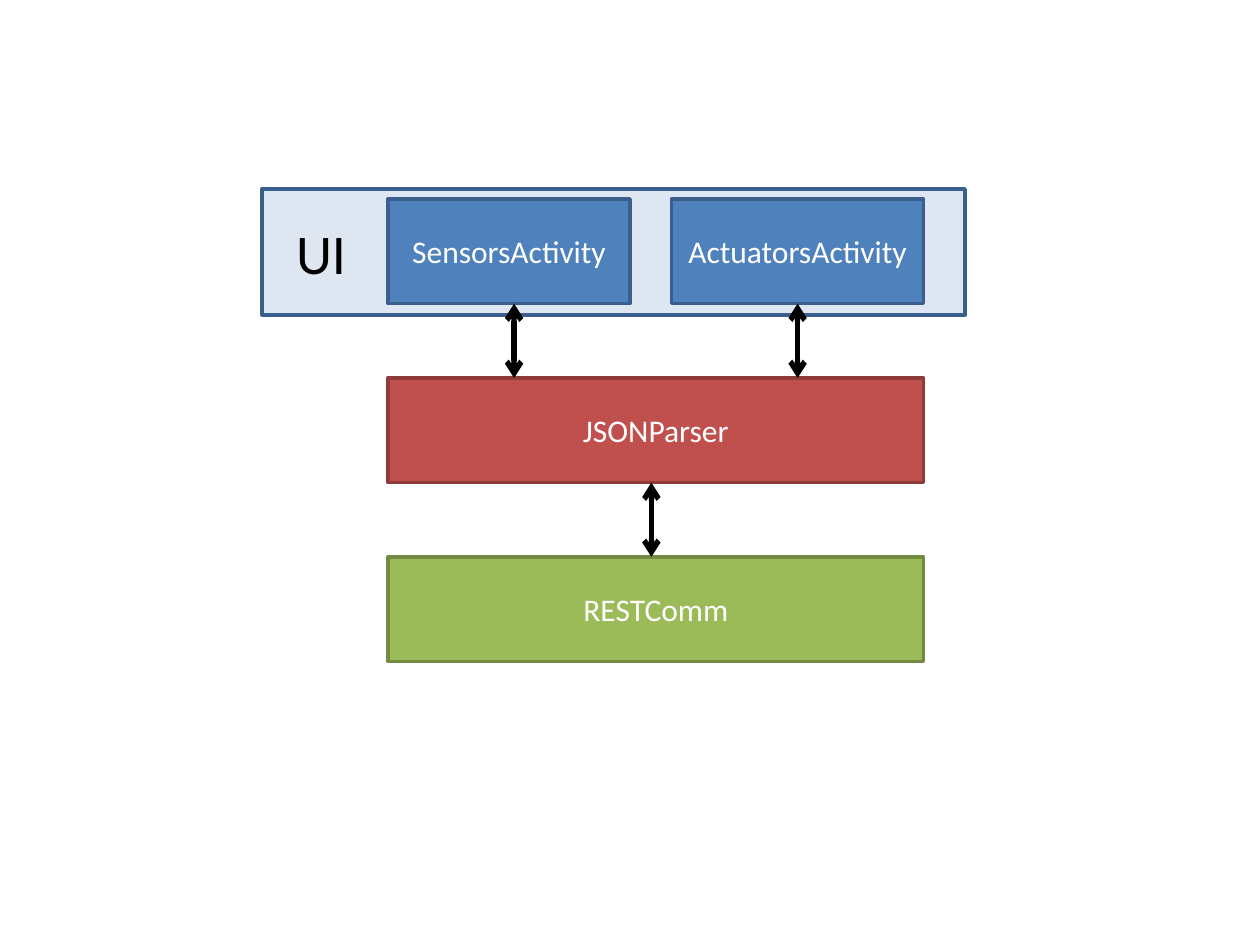
"""Build a slide showing the layers of an app and the links between them."""
from lxml import etree
from pptx import Presentation
from pptx.dml.color import RGBColor
from pptx.enum.shapes import MSO_CONNECTOR, MSO_SHAPE
from pptx.enum.text import MSO_ANCHOR, PP_ALIGN
from pptx.oxml.ns import qn
from pptx.util import Inches, Pt

RECTANGLE = MSO_SHAPE.RECTANGLE
STRAIGHT = MSO_CONNECTOR.STRAIGHT
MIDDLE = MSO_ANCHOR.MIDDLE
LEFT, CENTER = PP_ALIGN.LEFT, PP_ALIGN.CENTER

COLORS = {
    "panel": "DDE6F1",
    "blue": "4F81BD", "blue_line": "3A5F8C",
    "red": "C0504D", "red_line": "8E3B39",
    "green": "9BBB59", "green_line": "738A42",
    "black": "000000", "white": "FFFFFF",
}
BOX_LEFT, BOX_HEIGHT, LAYER_WIDTH = 3.08, 0.83, 4.25
ACTIVITY_TOP, PARSER_TOP, COMM_TOP = 1.58, 3, 4.42
BOXES = [
    ("SensorsActivity", BOX_LEFT, ACTIVITY_TOP, 1.92, "blue"),
    ("ActuatorsActivity", 5.33, ACTIVITY_TOP, 2, "blue"),
    ("JSONParser", BOX_LEFT, PARSER_TOP, LAYER_WIDTH, "red"),
    ("RESTComm", BOX_LEFT, COMM_TOP, LAYER_WIDTH, "green"),
]
ARROWS = [(6.33, ACTIVITY_TOP, PARSER_TOP), (4.08, ACTIVITY_TOP, PARSER_TOP),
          (5.17, PARSER_TOP, COMM_TOP)]


def color(name):
    return RGBColor.from_string(COLORS[name])


def add_box(slide, text, left, top, width, height, *, fill, line, size=18,
            text_color="white", align=CENTER, inset=0.1):
    shape = slide.shapes.add_shape(
        RECTANGLE, Inches(left), Inches(top), Inches(width), Inches(height))
    shape.shadow.inherit = False
    shape.fill.solid()
    shape.fill.fore_color.rgb = color(fill)
    shape.line.color.rgb = color(line)
    shape.line.width = Pt(2)
    frame = shape.text_frame
    frame.word_wrap = True
    frame.vertical_anchor = MIDDLE
    frame.margin_left = Inches(inset)
    paragraph = frame.paragraphs[0]
    paragraph.alignment = align
    run = paragraph.add_run()
    run.text = text
    run.font.name = "Calibri"
    run.font.size = Pt(size)
    run.font.color.rgb = color(text_color)


def add_double_arrow(slide, center, top, bottom):
    connector = slide.shapes.add_connector(
        STRAIGHT, Inches(center), Inches(bottom), Inches(center), Inches(top))
    connector.line.color.rgb = color("black")
    connector.line.width = Pt(3)
    line = connector.line._get_or_add_ln()
    for end in ("a:headEnd", "a:tailEnd"):
        etree.SubElement(line, qn(end), type="arrow")
    etree.SubElement(connector._element.spPr, qn("a:effectLst"))


def main():
    presentation = Presentation()
    presentation.slide_width, presentation.slide_height = Inches(10), Inches(7.5)
    slide = presentation.slides.add_slide(presentation.slide_layouts[6])
    add_box(slide, "UI", 2.08, 1.5, 5.58, 1, fill="panel", line="blue_line",
            size=32, text_color="black", align=LEFT, inset=0.27)
    for text, left, top, width, fill in BOXES:
        add_box(slide, text, left, top, width, BOX_HEIGHT,
                fill=fill, line=f"{fill}_line")
    for center, upper_top, lower_top in ARROWS:
        add_double_arrow(slide, center, upper_top + BOX_HEIGHT, lower_top)
    presentation.save("out.pptx")


if __name__ == "__main__":
    main()
